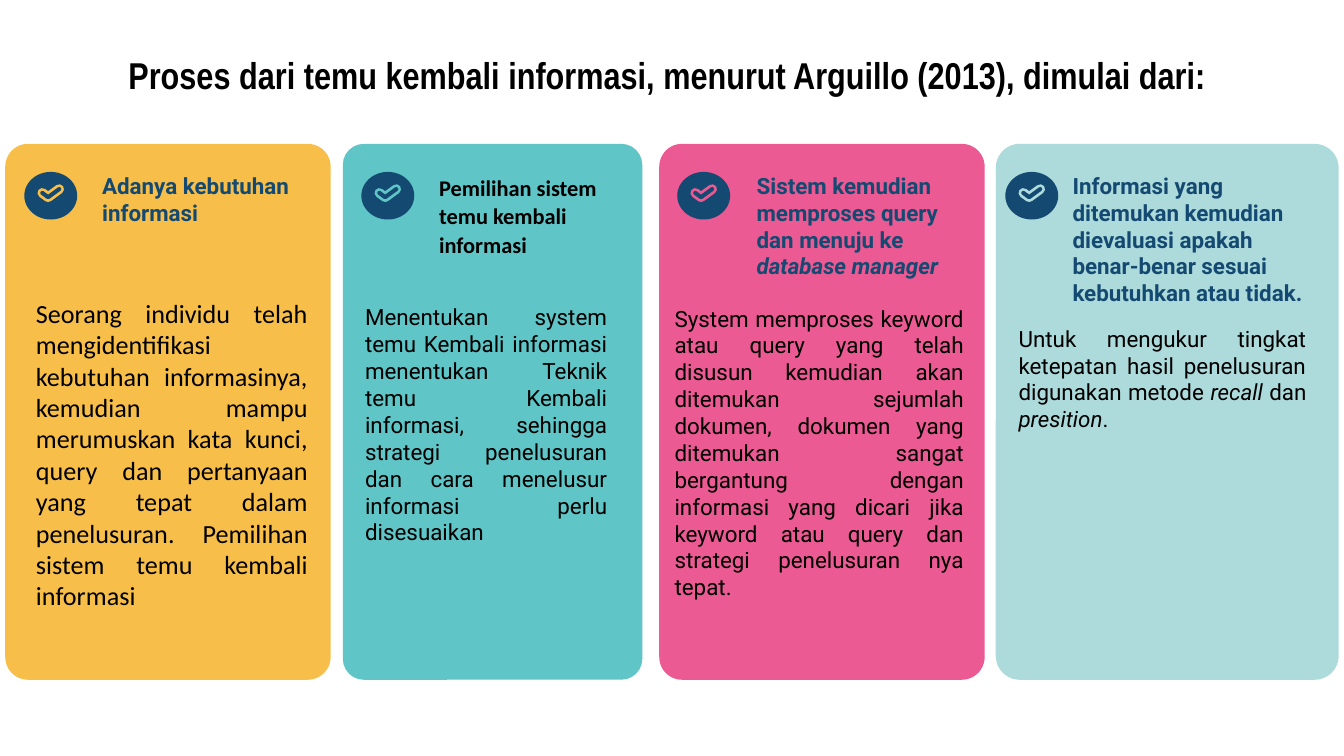
from lxml import etree
from pptx import Presentation
from pptx.dml.color import RGBColor as Rgb
from pptx.enum.shapes import MSO_SHAPE as Kind
from pptx.enum.text import PP_ALIGN as Align, MSO_ANCHOR as Anchor
from pptx.oxml.ns import qn
from pptx.util import Cm, Pt

COLORS = {
    "navy": "144971", "black": "000000", "gold": "F7BF4A",
    "teal": "5FC5C6", "pink": "EB5A93", "mint": "ADDBDB",
}
TOP, HEIGHT = 2.72, 10.13
HEAD_TOP, ICON_TOP = 3.0, 3.25
ICON = (1.0, 0.9)
TICK = [(0.34, 0.44), (0.45, 0.53), (0.66, 0.36)]

# Boxes are left, top, width, height in cm; *stars* mark italics.
CARDS = [
    dict(left=0.1, width=6.15, fill="gold", icon=0.46,
         head="Adanya kebutuhan informasi",
         head_box=(1.68, HEAD_TOP, 4.57, 1.6), head_font={},
         body="Seorang individu telah mengidentifikasi kebutuhan "
              "informasinya, kemudian mampu merumuskan kata kunci, query dan "
              "pertanyaan yang tepat dalam penelusuran. Pemilihan sistem "
              "temu kembali informasi",
         body_box=(0.43, 5.49, 5.64, 6.25), pad=0.13,
         body_font=dict(font="Calibri", size=14)),
    dict(left=6.48, width=5.66, fill="teal", icon=6.83,
         head="Pemilihan sistem temu kembali informasi",
         head_box=(8.05, HEAD_TOP, 3.68, 1.98),
         head_font=dict(font="Calibri", color="black", spacing=1.07, after=8),
         body="Menentukan system temu Kembali informasi menentukan Teknik "
              "temu Kembali informasi, sehingga strategi penelusuran dan cara "
              "menelusur informasi perlu disesuaikan",
         body_box=(6.65, 5.61, 5.08, 4.88), pad=0.13, body_font={}),
    dict(left=12.46, width=6.15, fill="pink", icon=12.8,
         head="Sistem kemudian memproses query dan menuju ke "
              "*database manager*",
         head_box=(14.05, HEAD_TOP, 4.37, 2.44), head_font={},
         body="System memproses keyword atau query yang telah disusun "
              "kemudian akan ditemukan sejumlah dokumen, dokumen yang "
              "ditemukan sangat bergantung dengan informasi yang dicari jika "
              "keyword atau query dan strategi penelusuran nya tepat.",
         body_box=(12.5, 5.51, 5.97, 7.67), pad=0.25, body_font={}),
    dict(left=18.82, width=6.48, fill="mint", icon=19.0,
         head="Informasi yang ditemukan kemudian dievaluasi apakah "
              "benar-benar sesuai kebutuhkan atau tidak.",
         head_box=(20.02, HEAD_TOP, 5.08, 1.85), head_font={},
         body="Untuk mengukur tingkat ketepatan hasil penelusuran digunakan "
              "metode *recall *dan *presition*.",
         body_box=(19.0, 5.89, 5.94, 6.1), pad=0.25, body_font={}),
]


def rgb(name):
    return Rgb.from_string(COLORS[name])


def add_text(slide, text, box, font="Roboto", size=12, color="black",
             bold=False, align=Align.LEFT, pad=0.25, spacing=None, after=None):
    """Add a wrapped text box; parts between stars become italic."""
    frame = slide.shapes.add_textbox(*map(Cm, box)).text_frame
    frame.word_wrap = True
    frame.vertical_anchor = Anchor.TOP
    frame.margin_left = frame.margin_right = Cm(0.25)
    frame.margin_top = frame.margin_bottom = Cm(pad)
    para = frame.paragraphs[0]
    para.alignment = align
    if spacing:
        para.line_spacing = spacing
    if after:
        para.space_after = Pt(after)
    for i, part in enumerate(text.split("*")):
        if not part:
            continue
        run = para.add_run()
        run.text = part
        run.font.name = font
        run.font.size = Pt(size)
        run.font.bold = bold
        run.font.italic = i % 2 == 1
        run.font.color.rgb = rgb(color)


def add_shape(slide, kind, box, color):
    shape = slide.shapes.add_shape(kind, *map(Cm, box))
    shape.shadow.inherit = False
    shape.fill.solid()
    shape.fill.fore_color.rgb = rgb(color)
    shape.line.fill.background()
    return shape


def add_tick(slide, left, color, width):
    """Draw the check mark as one round-ended stroke."""
    points = [(Cm(left + x * ICON[0]), Cm(ICON_TOP + y * ICON[1]))
              for x, y in TICK]
    pen = slide.shapes.build_freeform(*points[0])
    pen.add_line_segments(points[1:], close=False)
    tick = pen.convert_to_shape()
    tick.shadow.inherit = False
    tick.fill.background()
    tick.line.color.rgb = rgb(color)
    tick.line.width = Pt(width)
    line = tick.line._get_or_add_ln()
    line.set("cap", "rnd")
    etree.SubElement(line, qn("a:round"))


def add_icon(slide, left, color):
    add_shape(slide, Kind.OVAL, (left, ICON_TOP, *ICON), "navy")
    add_tick(slide, left, color, 5.2)
    add_tick(slide, left, "navy", 2.2)


def add_card(slide, card):
    box = (card["left"], TOP, card["width"], HEIGHT)
    panel = add_shape(slide, Kind.ROUNDED_RECTANGLE, box, card["fill"])
    panel.adjustments[0] = 0.07
    add_icon(slide, card["icon"], card["fill"])
    head = dict(color="navy", bold=True) | card["head_font"]
    add_text(slide, card["head"], card["head_box"], **head)
    add_text(slide, card["body"], card["body_box"], align=Align.JUSTIFY,
             pad=card["pad"], **card["body_font"])


def main():
    deck = Presentation()
    deck.slide_width, deck.slide_height = Cm(25.4), Cm(14.29)
    slide = deck.slides.add_slide(deck.slide_layouts[6])
    add_text(slide, "Proses dari temu kembali informasi, menurut Arguillo "
             "(2013), dimulai dari: ", (0.86, 0.74, 23.67, 1.6),
             font="Arial Narrow", size=20, bold=True, align=Align.CENTER)
    for card in CARDS:
        add_card(slide, card)
    deck.save("out.pptx")


if __name__ == "__main__":
    main()
